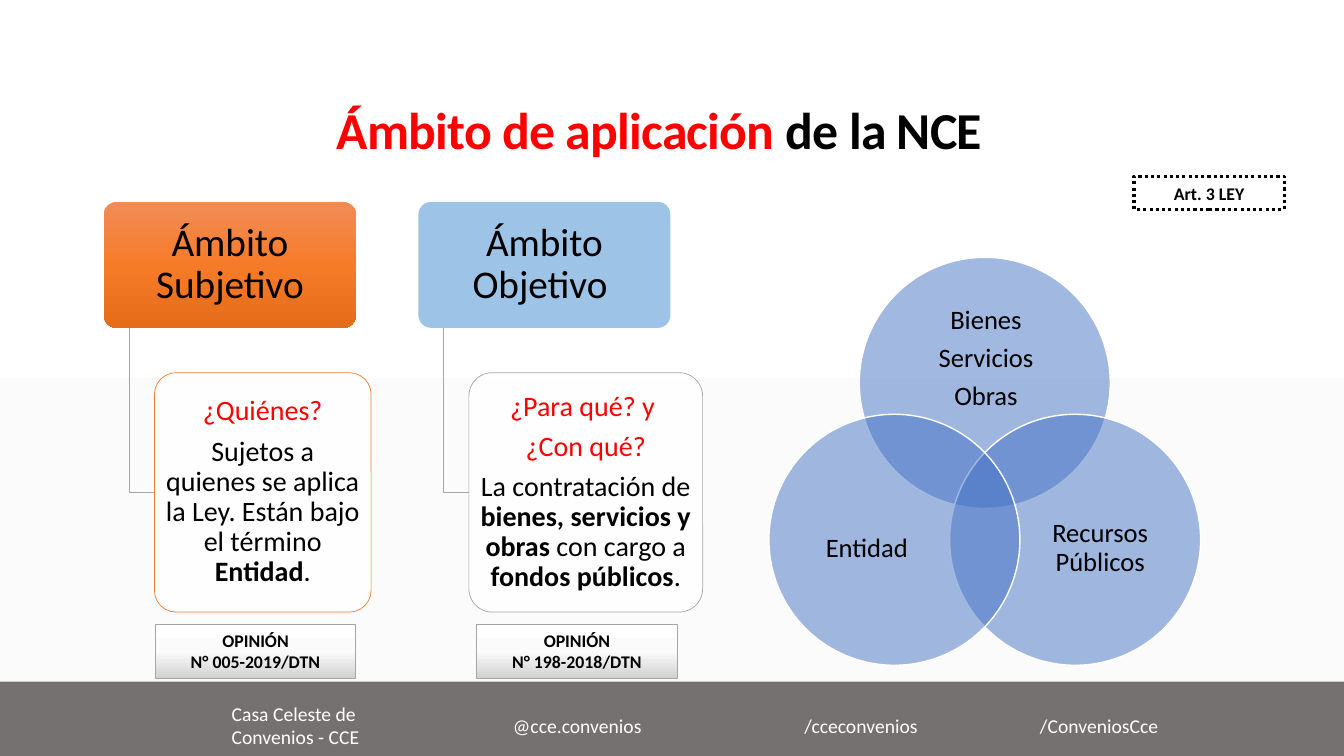
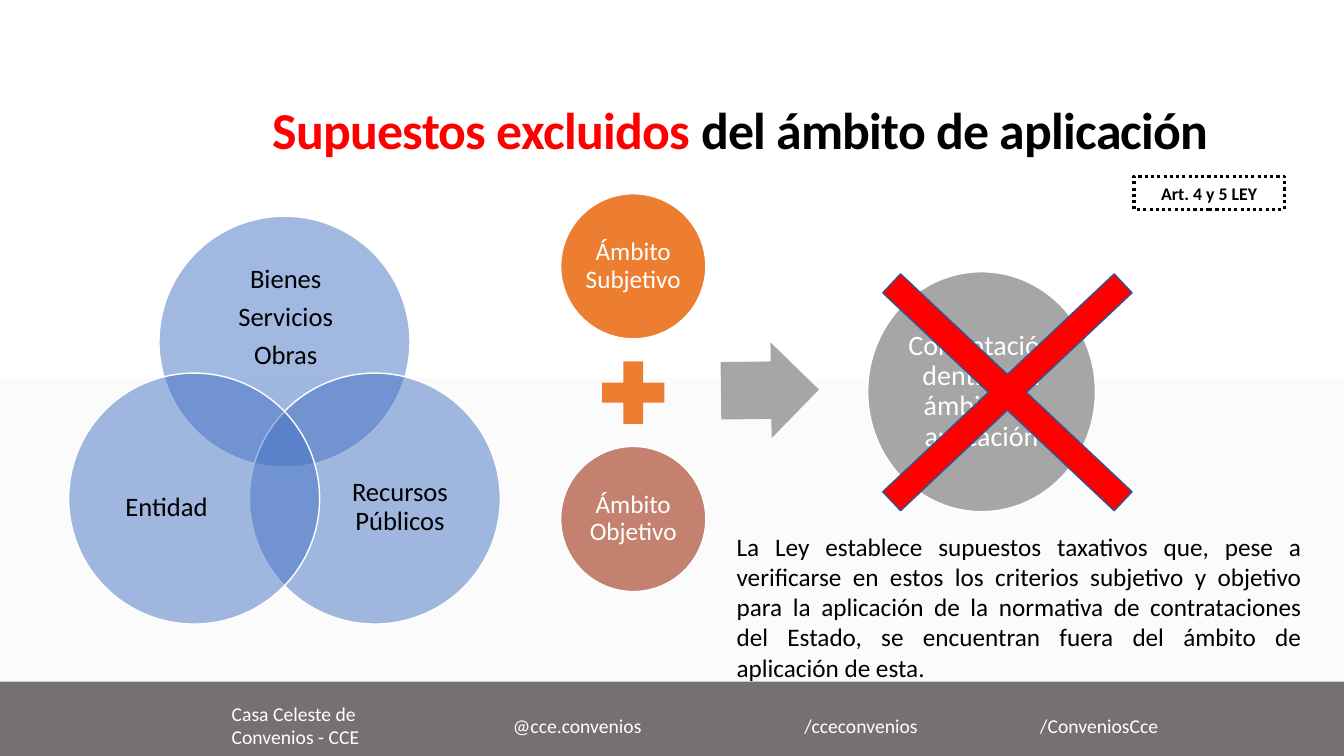
import lxml.etree
import pptx
import pptx.dml.color
import pptx.enum.dml
import pptx.enum.shapes
import pptx.enum.text
import pptx.oxml.ns
import pptx.util

Pt = pptx.util.Pt
qn = pptx.oxml.ns.qn
SHAPES = pptx.enum.shapes.MSO_SHAPE
ALIGN = pptx.enum.text.PP_ALIGN
ANCHOR = pptx.enum.text.MSO_ANCHOR

FONT = "Calibri"
WHITE, BLACK, RED = "FFFFFF", "000000", "FF0000"
ORANGE, BLUE, SKY, CLAY = "ED7D31", "4472C4", "9DC3E6", "C48170"
GRAY, LINE_GRAY, BAND_GRAY = "A6A6A6", "A5A5A5", "767171"
CROSS_LINE = "325491"
PAGE_GRADIENT = [WHITE, "FBFBFB"]
ORANGE_GRADIENT = ["F18C57", "F67B28", "E56C19"]
SILVER_GRADIENT = [WHITE, "FBFBFB", "D1D1D1"]

SLIDE_WIDTH, SLIDE_HEIGHT = 960, 540
BAND_BOX = (0, 487, SLIDE_WIDTH, 53)
TAG_BOX = (810, 126, 107.3, 23.8)
FOOTERS = [
    ("Casa Celeste de Convenios - CCE", 158.4, 140.4),
    ("@cce.convenios", 359.3, 113.8),
    ("/cceconvenios", 567.4, 113.8),
    ("/ConveniosCce", 735.8, 112.3),
]
DIAGRAM_SPACING = {"line_spacing": 0.9}
BOLD = {"bold": True}


def color(value):
    """Turn a hex string into a colour."""
    return pptx.dml.color.RGBColor.from_string(value)


def points(box):
    """Convert a box in points to slide lengths."""
    return [Pt(length) for length in box]


def apply_format(target, values):
    """Set each named attribute on the target."""
    for name, value in values.items():
        setattr(target, name, value)


def fill_gradient(owner, fill, colors):
    """Fill from top to bottom with evenly spaced colours."""
    fill.gradient()
    fill.gradient_angle = 270
    stops = next(owner.element.iter(qn("a:gsLst")))
    stops.clear()
    for index, value in enumerate(colors):
        position = str(100000 * index // (len(colors) - 1))
        stop = lxml.etree.SubElement(stops, qn("a:gs"), pos=position)
        lxml.etree.SubElement(stop, qn("a:srgbClr"), val=value)


def write_text(shape, paragraphs, size, text_color, align=ALIGN.CENTER,
               anchor=ANCHOR.MIDDLE, insets=(7.2, 3.6), diagram=False, bold=False):
    """Write paragraphs of (text, overrides) runs into a shape."""
    frame = shape.text_frame
    horizontal, vertical = points(insets)
    apply_format(frame, {
        "word_wrap": True, "auto_size": pptx.enum.text.MSO_AUTO_SIZE.NONE,
        "vertical_anchor": anchor, "margin_left": horizontal, "margin_right": horizontal,
        "margin_top": vertical, "margin_bottom": vertical,
    })
    for index, runs in enumerate(paragraphs):
        paragraph = frame.add_paragraph() if index else frame.paragraphs[0]
        paragraph.alignment = align
        if diagram:
            apply_format(paragraph, {**DIAGRAM_SPACING, "space_after": Pt(0.35 * size)})
        for text, overrides in runs:
            run = paragraph.add_run()
            run.text = text
            values = {"name": FONT, "size": Pt(size), "bold": bold, **overrides}
            run_color = values.pop("color", text_color)
            apply_format(run.font, values)
            run.font.color.rgb = color(run_color)


def plain(*lines):
    """Make one unformatted paragraph of each line."""
    return [[(line, {})] for line in lines]


def set_line(shape, line):
    """Draw a (colour, width) outline, or none."""
    if line:
        shape.line.color.rgb = color(line[0])
        shape.line.width = Pt(line[1])
    else:
        shape.line.fill.background()


def add_shape(slide, kind, box, fill, line=None, alpha=None, adjustments=()):
    """Add a preset shape with a solid or gradient fill."""
    shape = slide.shapes.add_shape(kind, *points(box))
    shape.shadow.inherit = False
    for index, value in enumerate(adjustments):
        shape.adjustments[index] = value
    if isinstance(fill, list):
        fill_gradient(shape, shape.fill, fill)
    else:
        shape.fill.solid()
        shape.fill.fore_color.rgb = color(fill)
    if alpha:
        fill_color = next(shape.element.iter(qn("a:srgbClr")))
        lxml.etree.SubElement(fill_color, qn("a:alpha"), val=str(alpha * 1000))
    set_line(shape, line)
    return shape


def add_text(slide, box, paragraphs, size, text_color, **options):
    """Add a text box."""
    write_text(slide.shapes.add_textbox(*points(box)), paragraphs, size, text_color, **options)


def draw_footer(slide, box):
    """Draw the bottom band with its contact texts."""
    left, top, width, height = box
    add_shape(slide, SHAPES.RECTANGLE, box, BAND_GRAY)
    for text, offset, text_width in FOOTERS:
        add_text(slide, (left + offset, top + 17, text_width, 28), plain(text),
                 14, WHITE, align=ALIGN.LEFT)


def draw_title(slide, box, highlight, rest):
    """Place the two-coloured title."""
    title = slide.shapes.title
    apply_format(title, dict(zip(("left", "top", "width", "height"), points(box))))
    write_text(title, [[(highlight, {"color": RED}), (rest, {})]], 37, BLACK,
               anchor=ANCHOR.TOP, bold=True)
    for properties in title.element.iter(qn("a:rPr")):
        properties.set("spc", "-50")


def draw_article_tag(slide, box, text):
    """Draw the dotted tag that cites the law."""
    tag = add_shape(slide, SHAPES.RECTANGLE, box, WHITE, (BLACK, 2.25))
    tag.line.dash_style = pptx.enum.dml.MSO_LINE.ROUND_DOT
    write_text(tag, plain(text), 12.7, BLACK, bold=True)


def draw_scope(slide, box, heading, fill, detail, outline, opinion, opinion_offset):
    """Draw a heading, its linked detail card and the opinion below."""
    left, top, width, height = box
    indent, heading_width, heading_height = 36, 180, 90
    card_top, card_height = top + 122, 171
    header = add_shape(slide, SHAPES.ROUNDED_RECTANGLE,
                       (left, top, heading_width, heading_height), fill, adjustments=[0.1])
    write_text(header, plain(heading), 28, BLACK, insets=(4.3, 3), diagram=True)

    elbow_left, elbow_bottom = left + indent / 2, card_top + card_height / 2
    builder = slide.shapes.build_freeform(Pt(elbow_left), Pt(top + heading_height))
    builder.add_line_segments([(Pt(elbow_left), Pt(elbow_bottom)),
                               (Pt(left + indent), Pt(elbow_bottom))], close=False)
    elbow = builder.convert_to_shape()
    elbow.shadow.inherit = False
    elbow.fill.background()
    set_line(elbow, (LINE_GRAY, 1))

    card = add_shape(slide, SHAPES.ROUNDED_RECTANGLE,
                     (left + indent, card_top, width - indent, card_height),
                     WHITE, (outline, 0.5), 90, [0.1])
    write_text(card, detail, 20, BLACK, insets=(3, 2), diagram=True)

    note_height = 38.9
    note = add_shape(slide, SHAPES.RECTANGLE,
                     (left + opinion_offset, top + height - note_height, 143.3, note_height),
                     SILVER_GRADIENT, (LINE_GRAY, 0.5))
    write_text(note, plain("OPINIÓN", opinion), 12.7, BLACK, bold=True)


def draw_venn(slide, box):
    """Draw three overlapping circles with their labels."""
    left, top, width, height = box
    diameter = width / 1.72
    low = height - diameter
    circles = [
        (0.36 * diameter, 0, (0.14, 0.18, 0.73, 0.45), ("Bienes", "Servicios", "Obras")),
        (0.72 * diameter, low, (0.3, 0.26, 0.6, 0.55), ("Recursos Públicos",)),
        (0, low, (0.09, 0.26, 0.6, 0.55), ("Entidad",)),
    ]
    for x, y, (label_x, label_y, label_width, label_height), lines in circles:
        circle_left, circle_top = left + x, top + y
        add_shape(slide, SHAPES.OVAL, (circle_left, circle_top, diameter, diameter),
                  BLUE, (WHITE, 1), 50)
        label_box = (circle_left + label_x * diameter, circle_top + label_y * diameter,
                     label_width * diameter, label_height * diameter)
        add_text(slide, label_box, plain(*lines), 19, BLACK, insets=(0, 0), diagram=True)


def draw_equation(slide, box):
    """Draw the two scopes adding up to the crossed-out result."""
    left, top, width, height = box
    diameter = 103.7
    middle = top + height / 2
    nodes = [
        ("Ámbito Subjetivo", 18, ORANGE, (left, top, diameter, diameter)),
        ("Ámbito Objetivo", 18, CLAY, (left, top + height - diameter, diameter, diameter)),
        ("Contratación dentro del ámbito de aplicación", 20, GRAY,
         (left + width - 162.7, middle - 86.4, 162.7, 171.4)),
    ]
    for text, size, fill, node_box in nodes:
        node = add_shape(slide, SHAPES.OVAL, node_box, fill, (WHITE, 1))
        write_text(node, plain(text), size, WHITE, insets=(2, 2), diagram=True)
    plus = 60.5
    add_shape(slide, SHAPES.MATH_PLUS,
              (left + (diameter - plus) / 2, middle - plus / 2, plus, plus), ORANGE)
    arrow = add_shape(slide, SHAPES.RIGHT_ARROW, (left + 114.5, middle - 36, 70, 68.4),
                      GRAY, adjustments=[0.6, 0.5])
    arrow.rotation = 359.3
    add_shape(slide, SHAPES.MATH_MULTIPLY, (left + 160, middle - 150, 318.2, 299.5),
              RED, (CROSS_LINE, 1), adjustments=[0.062])


def start_slide(presentation, title_box, highlight, rest, article):
    """Add a slide with the shared band, title and tag."""
    slide = presentation.slides.add_slide(presentation.slide_layouts[5])
    draw_footer(slide, BAND_BOX)
    draw_title(slide, title_box, highlight, rest)
    draw_article_tag(slide, TAG_BOX, article)
    return slide


def build_scope_slide(presentation):
    """Build the slide on the scope of application."""
    slide = start_slide(presentation, (0, 66.2, 942, 52), "Ámbito de aplicación ",
                        "de la NCE", "Art. 3 LEY")
    subjective = [
        [("¿Quiénes?", {"color": RED})],
        [("Sujetos a quienes se aplica la Ley. Están bajo el término ", {}),
         ("Entidad", BOLD), (".", {})],
    ]
    objective = [
        [("¿Para qué? y ", {"color": RED})],
        [("¿Con qué?", {"color": RED})],
        [("La contratación de ", {}), ("bienes, servicios y obras ", BOLD),
         ("con cargo a ", {}), ("fondos públicos", BOLD), (".", {})],
    ]
    draw_scope(slide, (74.3, 144.2, 190.8, 340.4), "Ámbito Subjetivo", ORANGE_GRADIENT,
               subjective, ORANGE, "N° 005-2019/DTN", 36.6)
    draw_scope(slide, (298.9, 144.2, 203, 340.4), "Ámbito Objetivo ", SKY,
               objective, LINE_GRAY, "N° 198-2018/DTN", 41.6)
    draw_venn(slide, (549.2, 183.8, 308.4, 291.4))


def build_exclusion_slide(presentation):
    """Build the slide on the excluded cases."""
    slide = start_slide(presentation, (98.6, 66.2, 861.1, 52), "Supuestos excluidos ",
                        "del ámbito de aplicación", "Art. 4 y 5 LEY")
    draw_venn(slide, (49, 154.4, 308.4, 291.4))
    draw_equation(slide, (400.5, 138.4, 382, 284.2))
    add_text(slide, (519.1, 375.8, 417.6, 116.6), plain(
        "La Ley establece supuestos taxativos que, pese a verificarse en estos los "
        "criterios subjetivo y objetivo para la aplicación de la normativa de "
        "contrataciones del Estado, se encuentran fuera del ámbito de aplicación de esta."),
        18, BLACK, align=ALIGN.JUSTIFY, anchor=ANCHOR.TOP)


def main():
    """Build and save the presentation."""
    presentation = pptx.Presentation()
    apply_format(presentation, {"slide_width": Pt(SLIDE_WIDTH), "slide_height": Pt(SLIDE_HEIGHT)})
    master = presentation.slide_master
    fill_gradient(master, master.background.fill, PAGE_GRADIENT)
    build_scope_slide(presentation)
    build_exclusion_slide(presentation)
    presentation.save("out.pptx")


if __name__ == "__main__":
    main()
